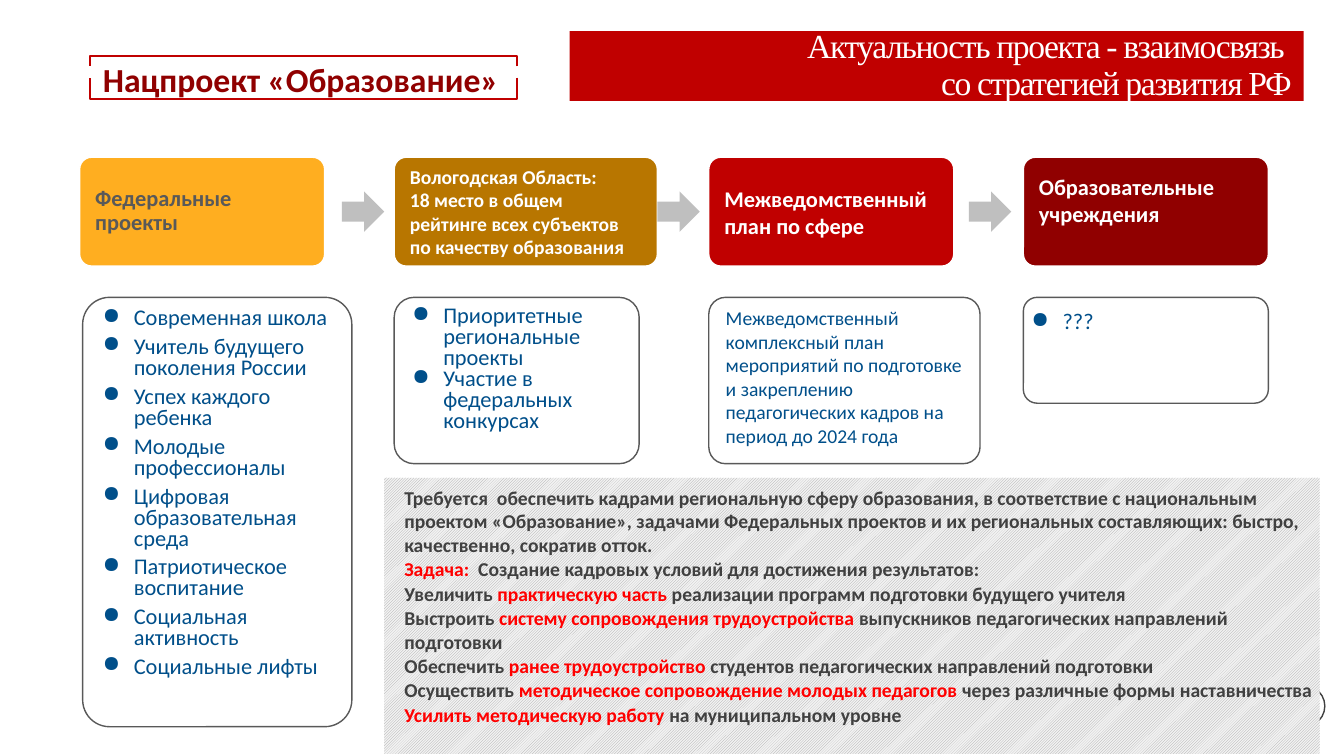
import pptx
import pptx.dml.color
import pptx.enum.dml
import pptx.enum.shapes
import pptx.enum.text
import pptx.util
from lxml import etree

Inches = pptx.util.Inches
Pt = pptx.util.Pt
KIND = pptx.enum.shapes.MSO_SHAPE
ALIGN = pptx.enum.text.PP_ALIGN
ANCHOR = pptx.enum.text.MSO_ANCHOR

RED, DARK, GRAY, BLUE, WHITE = "C00000", "900000", "595959", "004F8A", "FFFFFF"

STAGES = [
    ("Федеральные проекты", "FFAE20", GRAY, 2.43, 16, ANCHOR.MIDDLE, 0.9),
    ("Вологодская Область:\n18 место в общем рейтинге всех субъектов по качеству образования",
     "B87600", WHITE, 2.61, 14, ANCHOR.MIDDLE, 1),
    ("Межведомственный план по сфере", RED, WHITE, 2.43, 16, ANCHOR.MIDDLE, 1),
    ("Образовательные учреждения", DARK, WHITE, 2.43, 16, ANCHOR.TOP, 1),
]

FEDERAL = """Современная школа
Учитель будущего поколения России
Успех каждого ребенка
Молодые профессионалы
Цифровая образовательная среда
Патриотическое воспитание
Социальная активность
Социальные лифты"""
REGION = "Приоритетные региональные проекты\nУчастие в федеральных конкурсах"
PLAN = ("Межведомственный комплексный план мероприятий по подготовке и закреплению "
        "педагогических кадров на период до 2024 года")

GOALS = """Требуется  обеспечить кадрами региональную сферу образования, в соответствие с национальным проектом «Образование», задачами Федеральных проектов и их региональных составляющих: быстро, качественно, сократив отток.
*Задача:*  Создание кадровых условий для достижения результатов:
Увеличить *практическую часть* реализации программ подготовки будущего учителя
Выстроить *систему сопровождения трудоустройства *выпускников педагогических направлений подготовки
Обеспечить *ранее трудоустройство *студентов педагогических направлений подготовки
Осуществить *методическое сопровождение молодых педагогов *через различные формы наставничества
*Усилить методическую работу *на муниципальном уровне"""


def rgb(code):
    """Turn a hex string into a colour."""
    return pptx.dml.color.RGBColor.from_string(code)


def paint(shape, fill=None, line=None, width=1):
    """Set the fill and line of a shape, and drop its shadow."""
    shape.shadow.inherit = False
    if fill:
        shape.fill.solid()
        shape.fill.fore_color.rgb = rgb(fill)
    else:
        shape.fill.background()
    if line:
        shape.line.color.rgb = rgb(line)
        shape.line.width = Pt(width)
    else:
        shape.line.fill.background()


def draw(slide, kind, box, fill=None, line=None, adj=None):
    """Add a preset shape in a box."""
    shape = slide.shapes.add_shape(kind, *map(Inches, box))
    paint(shape, fill, line)
    if adj is not None:
        shape.adjustments[0] = adj
    return shape


def setup(frame, pads, anchor=ANCHOR.TOP):
    """Set wrapping, insets and anchor of a text frame."""
    frame.word_wrap = True
    frame.auto_size = pptx.enum.text.MSO_AUTO_SIZE.NONE
    frame.vertical_anchor = anchor
    (frame.margin_left, frame.margin_top,
     frame.margin_right, frame.margin_bottom) = map(Inches, pads)


def write(frame, text, size, color, bold=False, font="Calibri",
          align=ALIGN.LEFT, lead=None, after=0, before=0):
    """Fill a text frame, one paragraph a line, with starred parts in red."""
    for i, row in enumerate(text.split("\n")):
        para = frame.paragraphs[0] if i == 0 else frame.add_paragraph()
        para.alignment = align
        para.line_spacing = lead
        para.space_after = Pt(after)
        para.space_before = Pt(before)
        para.font.name, para.font.size, para.font.bold = font, Pt(size), bold
        para.font.color.rgb = rgb(color)
        for j, part in enumerate(row.split("*")):
            if part:
                run = para.add_run()
                run.text = part
                if j % 2:
                    run.font.color.rgb = rgb("FF0000")


def bullet(para):
    """Give a paragraph a round bullet and a hanging indent."""
    props = para._p.get_or_add_pPr()
    props.set("marL", str(Inches(0.31)))
    props.set("indent", str(Inches(-0.31)))
    mark = etree.SubElement(props, pptx.oxml.ns.qn("a:buChar"))
    mark.set("char", "●")


def title(slide, box):
    """Place the title between two open brackets."""
    left, top, width, height = box
    head = slide.shapes.title
    head.left, head.top, head.width, head.height = map(
        Inches, (left + 0.13, top, width - 0.13, height))
    setup(head.text_frame, (0, 0.02, 0, 0))
    write(head.text_frame, "Нацпроект «Образование»", 24, DARK, True)
    right, base = left + width, top + height
    for edge, tip in ((top, top + 0.1), (base, base - 0.21)):
        spots = [(right, tip), (right, edge), (left, edge), (left, tip)]
        spots = [(Inches(x), Inches(y)) for x, y in spots]
        pen = slide.shapes.build_freeform(*spots[0], scale=1.0)
        pen.add_line_segments(spots[1:], close=False)
        paint(pen.convert_to_shape(), line=RED, width=1.5)


def banner(slide, box):
    """Draw the red banner with the topic."""
    frame = draw(slide, KIND.RECTANGLE, box, RED).text_frame
    setup(frame, (0, 0, 0.12, 0), ANCHOR.MIDDLE)
    write(frame, "Актуальность проекта - взаимосвязь \nсо стратегией развития РФ",
          24, WHITE, font="Times New Roman", align=ALIGN.RIGHT, lead=0.9)
    for para in frame.paragraphs:
        for run in para.runs:
            run.font._element.set("spc", "-100")


def flow(slide, left, top, pitch):
    """Draw the row of stage cards and the arrows between them."""
    for i, (text, fill, color, width, size, anchor, lead) in enumerate(STAGES):
        box = (left + i * pitch, top, width, 1.08)
        card = draw(slide, KIND.ROUNDED_RECTANGLE, box, fill, WHITE, 0.11)
        setup(card.text_frame, [0.12] * 4, anchor)
        write(card.text_frame, text, size, color, True, lead=lead)
    for x in (2.6, 5.73, 8.82):
        draw(slide, KIND.RIGHT_ARROW, (left + x, top + 0.34, 0.42, 0.4), "BFBFBF")


def detail(slide, box, text, adj, pads, size=16, after=0, listed=True):
    """Draw an outlined box with a list or a plain text."""
    frame = draw(slide, KIND.ROUNDED_RECTANGLE, box, WHITE, GRAY, adj).text_frame
    setup(frame, pads)
    write(frame, text, size, BLUE, lead=Pt(15) if listed else None, after=after)
    if listed:
        for para in frame.paragraphs:
            bullet(para)


def panel(slide, box):
    """Draw the hatched panel of goals."""
    shape = draw(slide, KIND.RECTANGLE, box)
    shape.fill.patterned()
    shape.fill.pattern = pptx.enum.dml.MSO_PATTERN.LIGHT_UPWARD_DIAGONAL
    shape.fill.fore_color.rgb = rgb("A6A6A6")
    shape.fill.back_color.rgb = rgb("F2F2F2")
    setup(shape.text_frame, (0.2, 0.08, 0, 0))
    write(shape.text_frame, GOALS, 14, "404040", True, before=0.6)


def main():
    """Build the slide and save it."""
    deck = pptx.Presentation()
    deck.slide_width, deck.slide_height = Inches(13.33), Inches(7.5)
    slide = deck.slides.add_slide(deck.slide_layouts[5])
    draw(slide, KIND.OVAL, (12.73, 6.8, 0.41, 0.41), line="404040")
    title(slide, (0.89, 0.56, 4.24, 0.42))
    banner(slide, (5.65, 0.31, 7.28, 0.69))
    flow(slide, 0.79, 1.56, 3.12)
    pads = (0.12, 0.04, 0, 0.06)
    detail(slide, (0.82, 2.95, 2.67, 4.26), FEDERAL, 0.1, pads, after=5.6)
    detail(slide, (3.91, 2.95, 2.43, 1.65), REGION, 0.12, pads)
    detail(slide, (7.03, 2.95, 2.69, 1.65), PLAN, 0.1, pads, size=14, listed=False)
    detail(slide, (10.15, 2.95, 2.43, 1.05), "???", 0.13, (0.04, 0.12, 0, 0.05))
    panel(slide, (3.81, 4.74, 9.28, 2.74))
    deck.save("out.pptx")


if __name__ == "__main__":
    main()
